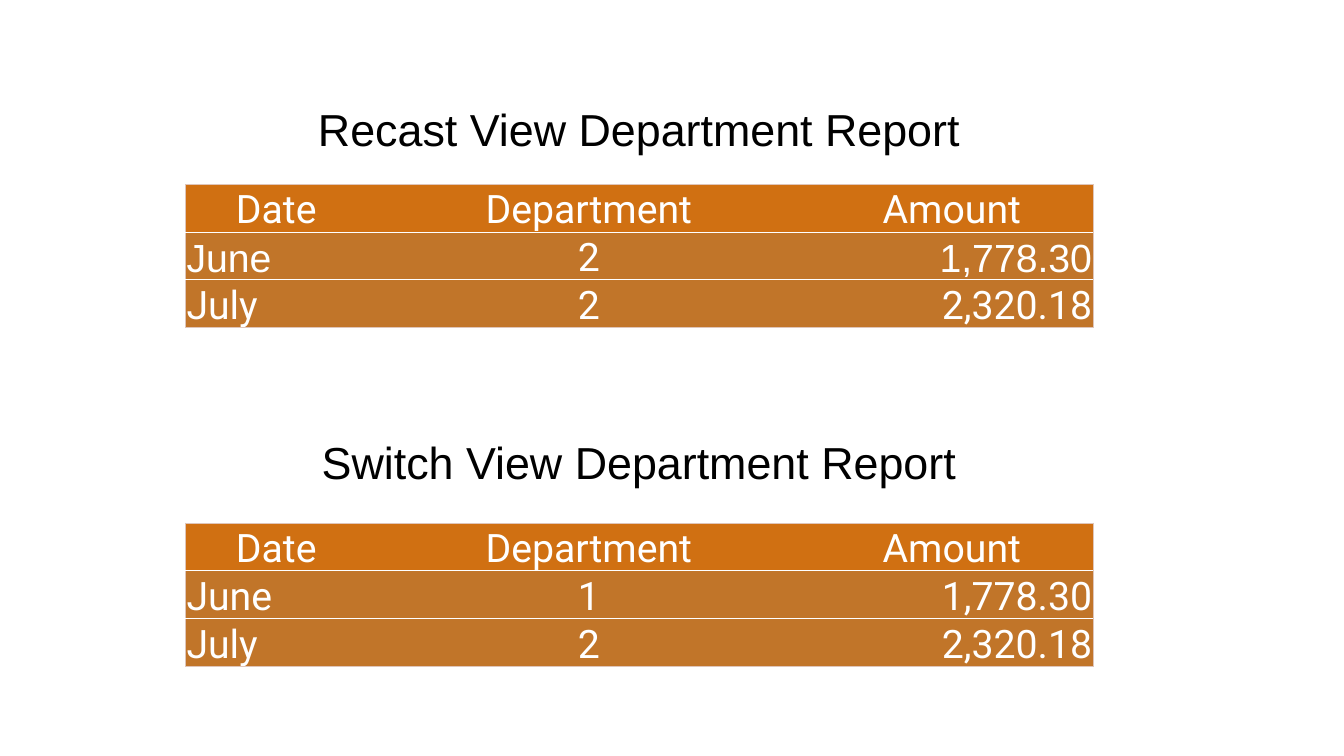
"""Build a slide that compares two department reports."""
from pptx import Presentation
from pptx.dml.color import RGBColor
from pptx.enum.text import MSO_ANCHOR as Anchor, MSO_AUTO_SIZE as AutoSize, PP_ALIGN as Align
from pptx.oxml.ns import qn
from pptx.util import Inches, Pt
from lxml.etree import SubElement, Element

HEADER = ("Date", "Department", "Amount")
REPORTS = [
    {"heading": "Recast View Department Report", "heading_top": 1.02, "table_top": 1.83,
     "rows": [("June", "2", "1,778.30"), ("July", "2", "2,320.18")],
     "arial_cells": {(1, 0), (1, 2)}},
    {"heading": "Switch View Department Report", "heading_top": 4.32, "table_top": 5.19,
     "rows": [("June", "1", "1,778.30"), ("July", "2", "2,320.18")],
     "arial_cells": set()},
]
THEME = {
    "header_fill": "D07012", "body_fill": "C17529", "table_text": "FFFFFF",
    "heading_text": "000000", "outer_line": ("DFC5B9", 0.75), "row_line": ("FFFFFF", 1),
    "heading_font": "Arial", "table_font": "Roboto", "heading_size": 32, "table_size": 28,
}
SLIDE_SIZE = (13.33, 7.5)
TABLE_LEFT, COLUMNS, ROW_HEIGHT = 1.84, (1.8, 4.4, 2.8), 1.42 / 3
HEADING_WIDTH, HEADING_HEIGHT = 6.62, 0.59
BODY_ALIGN = (Align.LEFT, Align.CENTER, Align.RIGHT)


def apply(target, values):
    for key, value in values.items():
        setattr(target, key, value)


def write(frame, text, align, font, size, color):
    frame.text = text
    paragraph = frame.paragraphs[0]
    apply(paragraph, {"alignment": align, "line_spacing": 0.9,
                      "space_before": Pt(0), "space_after": Pt(0)})
    run = paragraph.runs[0]
    apply(run.font, {"name": font, "size": Pt(size), "bold": False})
    run.font.color.rgb = RGBColor.from_string(color)


def set_borders(cell, edges):
    properties = cell._tc.get_or_add_tcPr()
    for index, (side, style) in enumerate(edges.items()):
        line = Element(qn(f"a:ln{side}"))
        if style:
            color, width = style
            line.set("w", str(Pt(width)))
            SubElement(SubElement(line, qn("a:solidFill")), qn("a:srgbClr"), val=color)
        else:
            SubElement(line, qn("a:noFill"))
        properties.insert(index, line)


def add_table(slide, report):
    rows = [HEADER, *report["rows"]]
    table = slide.shapes.add_table(
        len(rows), len(COLUMNS), Inches(TABLE_LEFT), Inches(report["table_top"]),
        Inches(sum(COLUMNS)), Inches(ROW_HEIGHT * len(rows))).table
    apply(table, {"first_row": False, "horz_banding": False})
    for column, width in zip(table.columns, COLUMNS):
        column.width = Inches(width)
    last_row, last_column = len(rows) - 1, len(COLUMNS) - 1
    outer, inner = THEME["outer_line"], THEME["row_line"]
    for r, values in enumerate(rows):
        for c, text in enumerate(values):
            cell = table.cell(r, c)
            apply(cell, {"vertical_anchor": Anchor.BOTTOM, "margin_left": Inches(0.01),
                         "margin_right": Inches(0.01), "margin_top": Inches(0.01),
                         "margin_bottom": 0})
            cell.fill.solid()
            fill = THEME["body_fill" if r else "header_fill"]
            cell.fill.fore_color.rgb = RGBColor.from_string(fill)
            set_borders(cell, {
                "L": outer if c == 0 else None,
                "R": outer if c == last_column else None,
                "T": outer if r == 0 else inner,
                "B": outer if r == last_row else inner})
            font = "heading_font" if (r, c) in report["arial_cells"] else "table_font"
            write(cell.text_frame, text, BODY_ALIGN[c] if r else Align.CENTER,
                  THEME[font], THEME["table_size"], THEME["table_text"])


def add_heading(slide, report, heading):
    apply(heading, {
        "left": Inches(TABLE_LEFT + (sum(COLUMNS) - HEADING_WIDTH) / 2),
        "top": Inches(report["heading_top"]),
        "width": Inches(HEADING_WIDTH), "height": Inches(HEADING_HEIGHT)})
    apply(heading.text_frame, {"word_wrap": False, "vertical_anchor": Anchor.TOP,
                               "auto_size": AutoSize.SHAPE_TO_FIT_TEXT})
    write(heading.text_frame, report["heading"], Align.CENTER, THEME["heading_font"],
          THEME["heading_size"], THEME["heading_text"])


def main():
    deck = Presentation()
    deck.slide_width, deck.slide_height = map(Inches, SLIDE_SIZE)
    slide = deck.slides.add_slide(deck.slide_layouts[5])
    for index, report in enumerate(REPORTS):
        heading = slide.shapes.add_textbox(0, 0, 0, 0) if index else slide.shapes.title
        add_heading(slide, report, heading)
        add_table(slide, report)
    deck.save("out.pptx")


if __name__ == "__main__":
    main()
